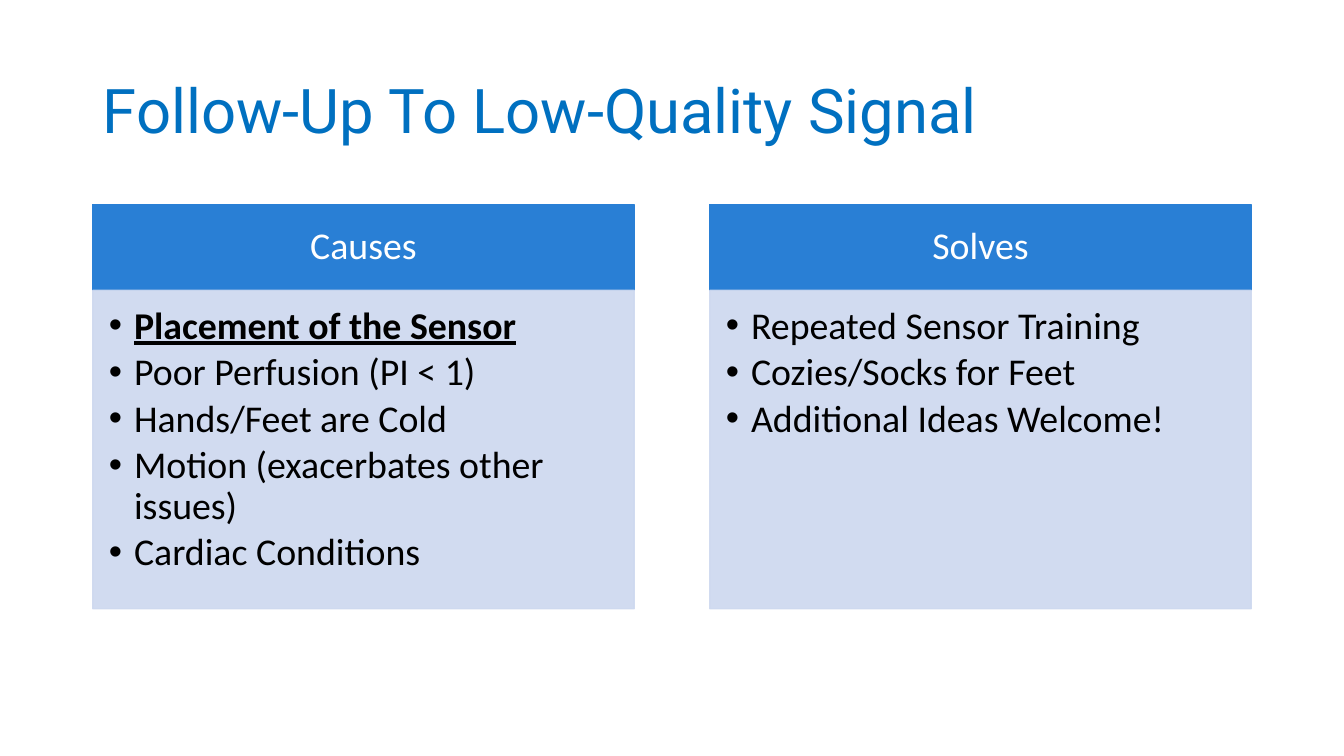
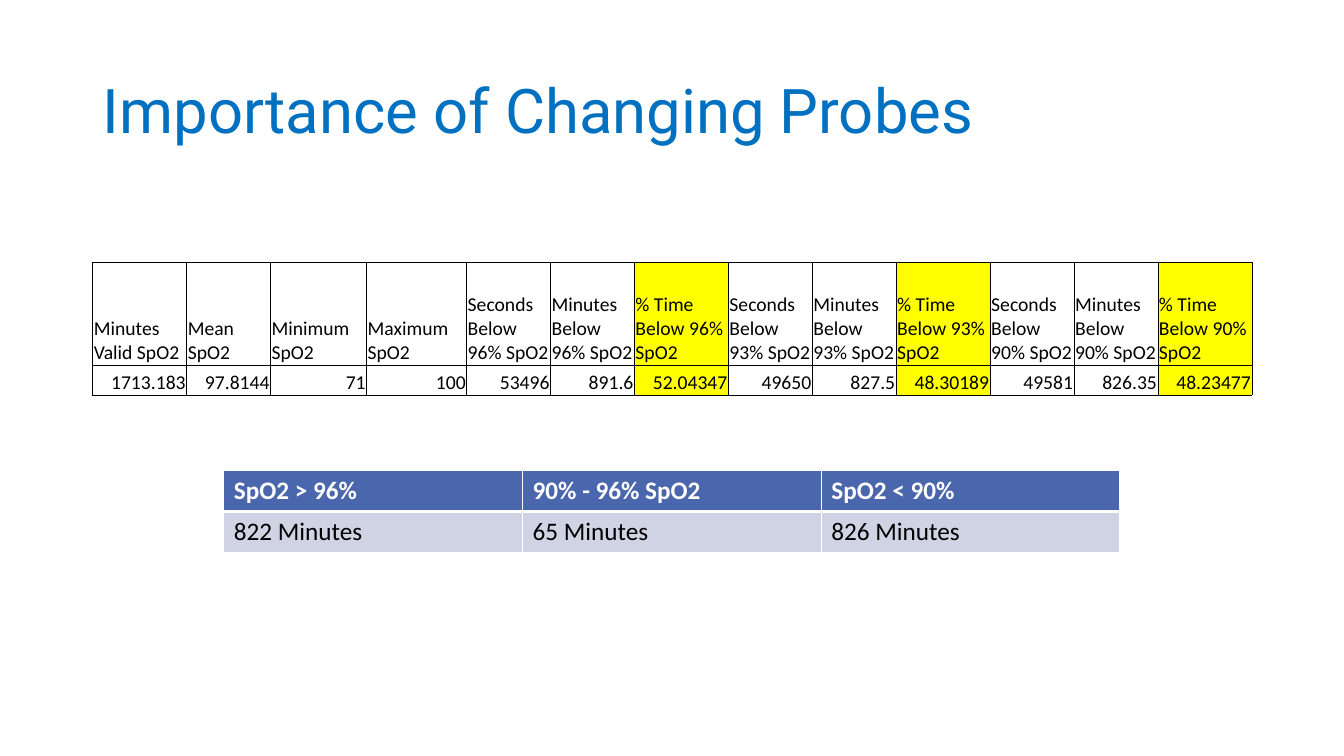
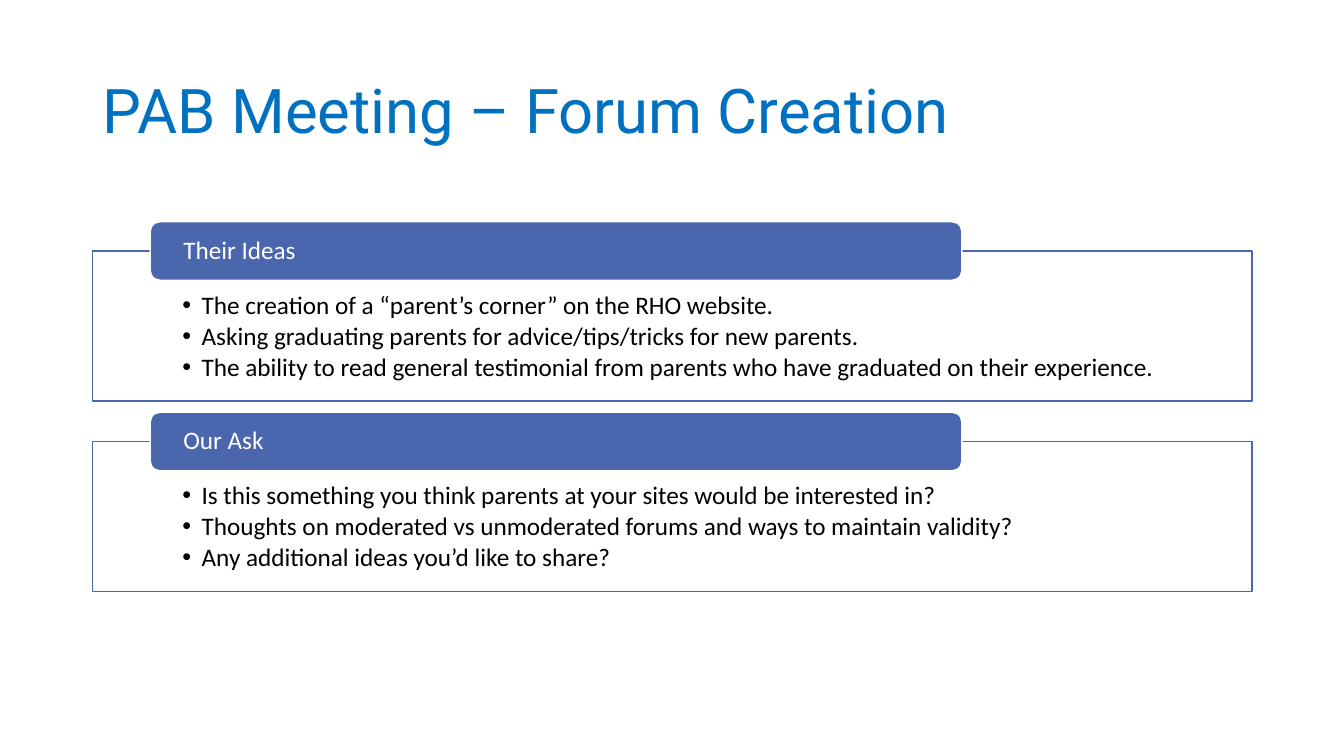
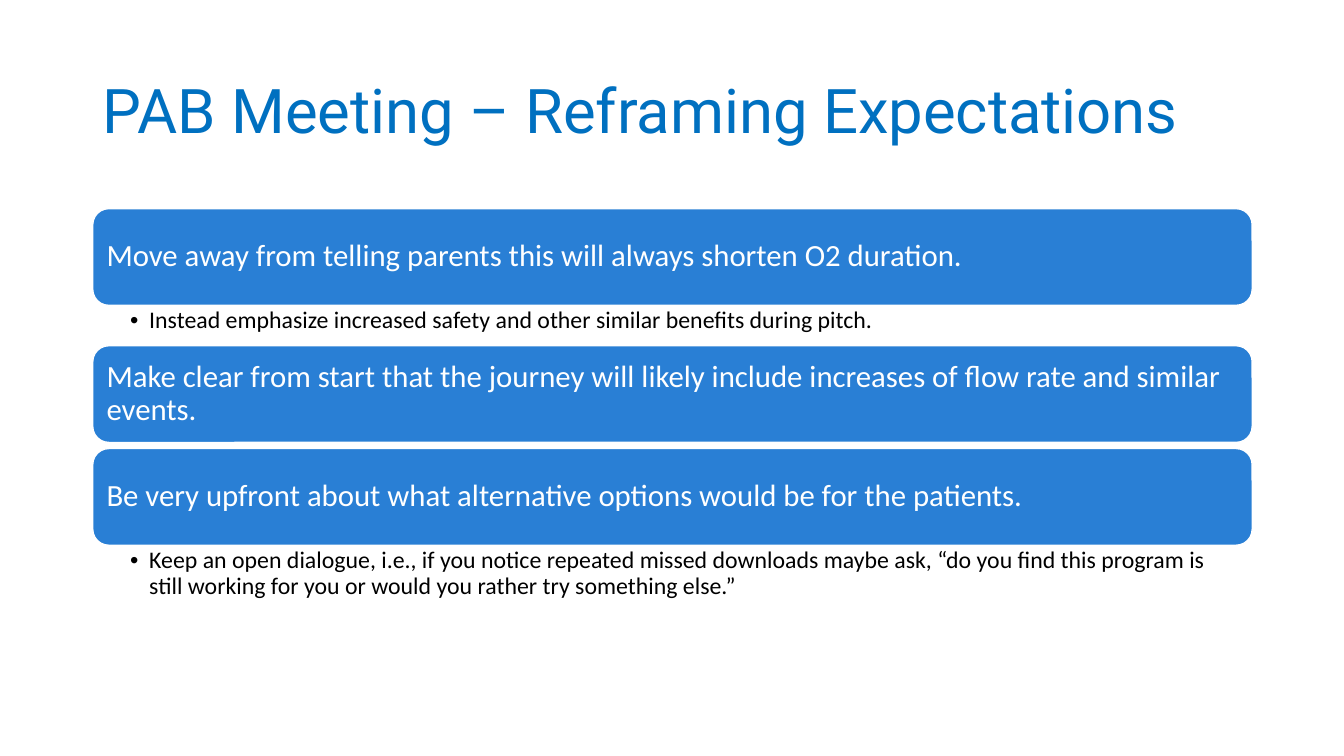
import dataclasses
import typing

import lxml.etree
import pptx
import pptx.dml.color
import pptx.dml.fill
import pptx.enum.shapes
import pptx.enum.text
import pptx.oxml
import pptx.oxml.ns
import pptx.shapes.autoshape
import pptx.slide
import pptx.table
import pptx.text.text
import pptx.util

Inches = pptx.util.Inches
Pt = pptx.util.Pt
ALIGN = pptx.enum.text.PP_ALIGN
ANCHOR = pptx.enum.text.MSO_ANCHOR
SHAPE = pptx.enum.shapes.MSO_SHAPE


@dataclasses.dataclass(frozen=True)
class Theme:
    title_color: str = "0070C0"
    bright: str = "297FD5"
    indigo: str = "4A66AC"
    pale: str = "CDD8EF"
    band: str = "D0D3E3"
    highlight: str = "FFFF00"
    white: str = "FFFFFF"
    black: str = "000000"
    title_font: str = "Roboto"
    body_font: str = "Calibri"
    title_size: float = 44
    column_size: float = 27
    banner_size: float = 22
    text_size: float = 18
    note_size: float = 17
    data_size: float = 14
    line_spacing: float = 0.9


THEME = Theme()
LEFT = 0.92
WIDTH = 11.5


class Area(typing.NamedTuple):
    left: float
    top: float
    width: float
    height: float

    def lengths(self) -> list[pptx.util.Length]:
        return [Inches(value) for value in self]


class Insets(typing.NamedTuple):
    left: float
    top: float
    right: float
    bottom: float


class Edge(typing.NamedTuple):
    color: str
    points: float


class Column(typing.NamedTuple):
    heading: str
    items: list[str]
    emphasized: int = 0


class Topic(typing.NamedTuple):
    heading: str
    items: list[str]


class Message(typing.NamedTuple):
    banner: str
    note: str = ""
    note_height: float = 0.06


class Measure(typing.NamedTuple):
    heading: str
    value: str
    width: float
    highlighted: bool = False


def rgb(color: str) -> pptx.dml.color.RGBColor:
    return pptx.dml.color.RGBColor.from_string(color)


def paint(fill: pptx.dml.fill.FillFormat, color: str) -> None:
    fill.solid()
    fill.fore_color.rgb = rgb(color)


def add_bullet(para: pptx.text.text._Paragraph, indent: float) -> None:
    properties = para._p.get_or_add_pPr()
    properties.set("marL", str(Inches(indent)))
    properties.set("indent", str(-Inches(indent)))
    lxml.etree.SubElement(properties, pptx.oxml.ns.qn("a:buFont"), typeface="Arial")
    lxml.etree.SubElement(properties, pptx.oxml.ns.qn("a:buChar"), char="•")


def write_text(
    frame: pptx.text.text.TextFrame,
    lines: list[str],
    *,
    size: float,
    color: str = THEME.black,
    font: str = THEME.body_font,
    align: ALIGN = ALIGN.LEFT,
    spacing: float = THEME.line_spacing,
    space_after: float = 0,
    bullet_indent: float = 0,
    bold: bool = False,
    emphasized: int = 0,
) -> None:
    for index, line in enumerate(lines):
        para = frame.add_paragraph() if index else frame.paragraphs[0]
        if bullet_indent:
            add_bullet(para, bullet_indent)
        para.alignment = align
        para.line_spacing = spacing
        para.space_before = Pt(0)
        para.space_after = Pt(space_after)
        span = para.add_run()
        span.text = line
        span.font.name = font
        span.font.size = Pt(size)
        span.font.color.rgb = rgb(color)
        span.font.bold = bold or index < emphasized
        span.font.underline = index < emphasized


def set_frame(frame: pptx.text.text.TextFrame, insets: Insets, anchor: ANCHOR) -> None:
    frame.word_wrap = True
    frame.auto_size = pptx.enum.text.MSO_AUTO_SIZE.NONE
    frame.vertical_anchor = anchor
    frame.margin_left, frame.margin_top, frame.margin_right, frame.margin_bottom = map(Inches, insets)


def add_panel(
    page: pptx.slide.Slide,
    area: Area,
    insets: Insets,
    *,
    fill: str,
    line: str,
    kind: SHAPE = SHAPE.RECTANGLE,
    anchor: ANCHOR = ANCHOR.MIDDLE,
    opacity: int = 100,
) -> pptx.text.text.TextFrame:
    box = page.shapes.add_shape(kind, *area.lengths())
    box.shadow.inherit = False
    paint(box.fill, fill)
    paint(box.line.fill, line)
    box.line.width = Pt(1)
    if opacity < 100:
        for color in box._element.spPr.iter(pptx.oxml.ns.qn("a:srgbClr")):
            lxml.etree.SubElement(color, pptx.oxml.ns.qn("a:alpha"), val=str(opacity * 1000))
    set_frame(box.text_frame, insets, anchor)
    return box.text_frame


def add_page(deck: pptx.presentation.Presentation, title: str) -> pptx.slide.Slide:
    page = deck.slides.add_slide(deck.slide_layouts[5])
    box = page.shapes.title
    box.left, box.top, box.width, box.height = Area(LEFT, 0.4, WIDTH, 1.45).lengths()
    set_frame(box.text_frame, Insets(0.1, 0.05, 0.1, 0.05), ANCHOR.MIDDLE)
    write_text(box.text_frame, [title], size=THEME.title_size, color=THEME.title_color, font=THEME.title_font)
    return page


def add_grid(
    page: pptx.slide.Slide, area: Area, widths: list[float], heights: list[float]
) -> pptx.table.Table:
    table = page.shapes.add_table(len(heights), len(widths), *area.lengths()).table
    table.first_row = table.horz_banding = False
    for column, width in zip(table.columns, widths):
        column.width = Inches(width)
    for row, height in zip(table.rows, heights):
        row.height = Inches(height)
    return table


def format_cell(
    cell: pptx.table._Cell,
    *,
    fill: str | None,
    insets: Insets,
    anchor: ANCHOR,
    edges: dict[str, Edge],
) -> None:
    properties = cell._tc.get_or_add_tcPr()
    for side, edge in edges.items():
        border = lxml.etree.SubElement(properties, pptx.oxml.ns.qn(f"a:ln{side}"), w=str(Pt(edge.points)))
        solid = lxml.etree.SubElement(border, pptx.oxml.ns.qn("a:solidFill"))
        lxml.etree.SubElement(solid, pptx.oxml.ns.qn("a:srgbClr"), val=edge.color)
    if fill:
        paint(cell.fill, fill)
    else:
        cell.fill.background()
    cell.margin_left, cell.margin_top, cell.margin_right, cell.margin_bottom = map(Inches, insets)
    cell.vertical_anchor = anchor


def draw_signal_page(deck: pptx.presentation.Presentation) -> None:
    page = add_page(deck, "Follow-Up To Low-Quality Signal")
    columns = [
        Column(
            "Causes",
            [
                "Placement of the Sensor",
                "Poor Perfusion (PI < 1)",
                "Hands/Feet are Cold",
                "Motion (exacerbates other issues)",
                "Cardiac Conditions",
            ],
            emphasized=1,
        ),
        Column("Solves", ["Repeated Sensor Training", "Cozies/Socks for Feet", "Additional Ideas Welcome!"]),
    ]
    width, top, header_height = 5.37, 2.03, 0.85
    for index, column in enumerate(columns):
        left = LEFT + index * 6.12
        header = add_panel(
            page,
            Area(left, top, width, header_height),
            Insets(0.21, 0.12, 0.21, 0.12),
            fill=THEME.bright,
            line=THEME.bright,
        )
        write_text(header, [column.heading], size=THEME.column_size, color=THEME.white, align=ALIGN.CENTER)
        body = add_panel(
            page,
            Area(left, top + header_height, width, 3.16),
            Insets(0.16, 0.16, 0.21, 0.24),
            fill=THEME.pale,
            line=THEME.pale,
            anchor=ANCHOR.TOP,
            opacity=90,
        )
        write_text(
            body,
            column.items,
            size=THEME.column_size,
            bullet_indent=0.25,
            space_after=4,
            emphasized=column.emphasized,
        )


def draw_probe_page(deck: pptx.presentation.Presentation) -> None:
    page = add_page(deck, "Importance of Changing Probes")
    measures = [
        Measure("Minutes Valid SpO2", "1713.183", 0.93),
        Measure("Mean SpO2", "97.8144", 0.83),
        Measure("Minimum SpO2", "71", 0.95),
        Measure("Maximum SpO2", "100", 0.99),
    ]
    thresholds = {
        "96%": ("53496", "891.6", "52.04347"),
        "93%": ("49650", "827.5", "48.30189"),
        "90%": ("49581", "826.35", "48.23477"),
    }
    for level, (seconds, minutes, share) in thresholds.items():
        measures += [
            Measure(f"Seconds Below {level} SpO2", seconds, 0.83),
            Measure(f"Minutes Below {level} SpO2", minutes, 0.83),
            Measure(f"% Time Below {level} SpO2", share, 0.93, highlighted=True),
        ]
    widths = [measure.width for measure in measures]
    scale = WIDTH / sum(widths)
    data = add_grid(page, Area(LEFT, 2.6, WIDTH, 1.32), [width * scale for width in widths], [1.02, 0.3])
    for index, measure in enumerate(measures):
        for row, text in enumerate((measure.heading, measure.value)):
            cell = data.cell(row, index)
            format_cell(
                cell,
                fill=THEME.highlight if measure.highlighted else None,
                insets=Insets(0.01, 0.01, 0.01, 0),
                anchor=ANCHOR.BOTTOM,
                edges={side: Edge(THEME.black, 0.5) for side in "LRTB"},
            )
            write_text(
                cell.text_frame,
                [text],
                size=THEME.data_size,
                align=ALIGN.RIGHT if row else ALIGN.LEFT,
                spacing=1.0,
            )

    ranges = [("SpO2 > 96%", "822 Minutes"), ("90% - 96% SpO2", "65 Minutes"), ("SpO2 < 90%", "826 Minutes")]
    summary = add_grid(page, Area(2.22, 4.67, 8.89, 0.81), [8.89 / 3] * 3, [0.405] * 2)
    thin, thick = Edge(THEME.white, 1), Edge(THEME.white, 3)
    for index, texts in enumerate(ranges):
        for row, text in enumerate(texts):
            cell = summary.cell(row, index)
            format_cell(
                cell,
                fill=THEME.band if row else THEME.indigo,
                insets=Insets(0.1, 0.05, 0.1, 0.05),
                anchor=ANCHOR.TOP,
                edges={"L": thin, "R": thin, "T": thick if row else thin, "B": thin if row else thick},
            )
            write_text(
                cell.text_frame,
                [text],
                size=THEME.text_size,
                color=THEME.black if row else THEME.white,
                bold=row == 0,
                spacing=1.0,
            )


def draw_forum_page(deck: pptx.presentation.Presentation) -> None:
    page = add_page(deck, "PAB Meeting – Forum Creation")
    topics = [
        Topic(
            "Their Ideas",
            [
                "The creation of a “parent’s corner” on the RHO website.",
                "Asking graduating parents for advice/tips/tricks for new parents.",
                "The ability to read general testimonial from parents who have graduated on their experience.",
            ],
        ),
        Topic(
            "Our Ask",
            [
                "Is this something you think parents at your sites would be interested in?",
                "Thoughts on moderated vs unmoderated forums and ways to maintain validity?",
                "Any additional ideas you’d like to share?",
            ],
        ),
    ]
    for index, topic in enumerate(topics):
        top = 2.49 + index * 1.89
        body = add_panel(
            page,
            Area(LEFT, top, WIDTH, 1.49),
            Insets(0.89, 0.41, 0.89, 0.14),
            fill=THEME.white,
            line=THEME.indigo,
            anchor=ANCHOR.TOP,
        )
        write_text(body, topic.items, size=THEME.text_size, bullet_indent=0.19, space_after=2.7)
        tab = add_panel(
            page,
            Area(1.49, top - 0.29, 8.05, 0.58),
            Insets(0.3, 0, 0.3, 0),
            fill=THEME.indigo,
            line=THEME.white,
            kind=SHAPE.ROUNDED_RECTANGLE,
        )
        write_text(tab, [topic.heading], size=THEME.text_size, color=THEME.white)


def draw_expectations_page(deck: pptx.presentation.Presentation) -> None:
    page = add_page(deck, "PAB Meeting – Reframing Expectations")
    messages = [
        Message(
            "Move away from telling parents this will always shorten O2 duration.",
            "Instead emphasize increased safety and other similar benefits during pitch.",
            0.4,
        ),
        Message(
            "Make clear from start that the journey will likely include increases of flow rate "
            "and similar events."
        ),
        Message(
            "Be very upfront about what alternative options would be for the patients.",
            "Keep an open dialogue, i.e., if you notice repeated missed downloads maybe ask, "
            "“do you find this program is still working for you or would you rather try something else.”",
            0.59,
        ),
    ]
    top, banner_height = 2.07, 0.96
    for message in messages:
        banner = add_panel(
            page,
            Area(LEFT, top, WIDTH, banner_height),
            Insets(0.09, 0.09, 0.09, 0.09),
            fill=THEME.bright,
            line=THEME.white,
            kind=SHAPE.ROUNDED_RECTANGLE,
        )
        write_text(banner, [message.banner], size=THEME.banner_size, color=THEME.white)
        top += banner_height
        if message.note:
            note = page.shapes.add_textbox(*Area(LEFT, top, WIDTH, message.note_height).lengths())
            set_frame(note.text_frame, Insets(0.37, 0.03, 0.17, 0.03), ANCHOR.TOP)
            write_text(note.text_frame, [message.note], size=THEME.note_size, bullet_indent=0.19)
        top += message.note_height


def main() -> None:
    deck = pptx.Presentation()
    deck.slide_width = Inches(13.33)
    deck.slide_height = Inches(7.5)
    draw_signal_page(deck)
    draw_probe_page(deck)
    draw_forum_page(deck)
    draw_expectations_page(deck)
    deck.save("out.pptx")


if __name__ == "__main__":
    main()
